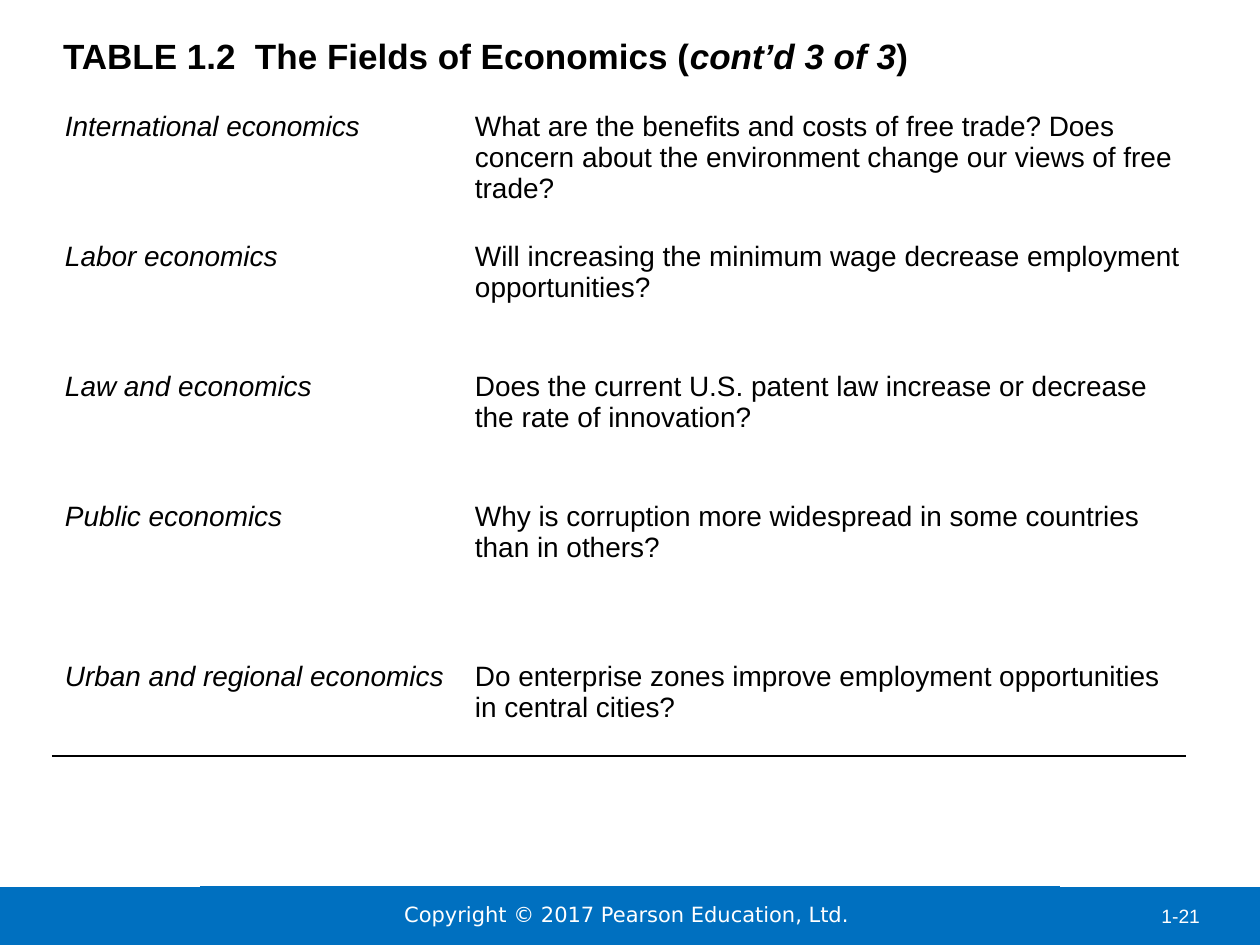
from dataclasses import dataclass

from lxml.etree import SubElement
from pptx import Presentation
from pptx.dml.color import RGBColor
from pptx.enum.shapes import MSO_SHAPE as Shape
from pptx.enum.text import MSO_ANCHOR as Anchor, MSO_AUTO_SIZE as AutoSize, PP_ALIGN as Align
from pptx.oxml.ns import qn
from pptx.util import Inches, Pt

PX = Inches(1) / 126
PLAIN_TABLE_STYLE = "{2D5ABB26-0587-4C30-8999-92F81FD0307C}"


def px(*lengths):
    return [round(length * PX) for length in lengths]


@dataclass(frozen=True)
class Theme:
    ink: str = "000000"
    light: str = "FFFFFF"
    band: str = "0070C0"
    font: str = "Arial"
    footer_font: str = "DejaVu Sans"
    title_size: int = 20
    body_size: int = 16
    footer_size: int = 12
    number_size: int = 11


class SlideBuilder:
    def __init__(self, slide, theme):
        self.slide = slide
        self.theme = theme

    def add_runs(self, frame, runs, size, color, font=None, bold=False, align=Align.LEFT):
        """Fill a text frame with (text, italic) runs."""
        paragraph = frame.paragraphs[0]
        paragraph.alignment = align
        for text, italic in runs:
            run = paragraph.add_run()
            run.text = text
            run.font.name = font or self.theme.font
            run.font.size = Pt(size)
            run.font.bold = bold
            run.font.italic = italic
            run.font.color.rgb = RGBColor.from_string(color)

    def set_margins(self, target, left=0, top=0, right=0, bottom=0):
        (target.margin_left, target.margin_top,
         target.margin_right, target.margin_bottom) = px(left, top, right, bottom)

    def title(self, box, runs):
        title = self.slide.shapes.title
        title.left, title.top, title.width, title.height = px(*box)
        frame = title.text_frame
        frame.word_wrap = True
        frame.auto_size = AutoSize.NONE
        frame.vertical_anchor = Anchor.TOP
        self.set_margins(frame, top=3)
        self.add_runs(frame, runs, self.theme.title_size, self.theme.ink, bold=True)

    def band(self, box, text=None):
        shape = self.slide.shapes.add_shape(Shape.RECTANGLE, *px(*box))
        shape.shadow.inherit = False
        shape.fill.solid()
        shape.fill.fore_color.rgb = RGBColor.from_string(self.theme.band)
        shape.line.fill.background()
        if text:
            frame = shape.text_frame
            frame.vertical_anchor = Anchor.MIDDLE
            self.set_margins(frame)
            self.add_runs(frame, [(text, False)], self.theme.footer_size, self.theme.light,
                          self.theme.footer_font, align=Align.CENTER)

    def page_number(self, box, text):
        frame = self.slide.shapes.add_textbox(*px(*box)).text_frame
        frame.word_wrap = True
        self.add_runs(frame, [(text, False)], self.theme.number_size, self.theme.light)

    def table(self, origin, widths, heights, rows):
        box = (*origin, sum(widths), sum(heights))
        table = self.slide.shapes.add_table(len(rows), len(widths), *px(*box)).table
        table.first_row = table.horz_banding = False
        table._tbl.tblPr.find(qn("a:tableStyleId")).text = PLAIN_TABLE_STYLE
        for column, width in zip(table.columns, px(*widths)):
            column.width = width
        for row, height, texts in zip(table.rows, px(*heights), rows):
            row.height = height
            for index, (cell, text) in enumerate(zip(row.cells, texts)):
                self.set_margins(cell, left=13, top=6, bottom=6)
                self.add_runs(cell.text_frame, [(text, index == 0)],
                              self.theme.body_size, self.theme.ink)
                if texts is rows[-1]:
                    self.bottom_border(cell)
                cell.fill.background()

    def bottom_border(self, cell):
        border = SubElement(cell._tc.get_or_add_tcPr(), qn("a:lnB"), w=str(Pt(1)))
        fill = SubElement(border, qn("a:solidFill"))
        SubElement(fill, qn("a:srgbClr"), val=self.theme.ink)


FIELDS = [
    ("International economics",
     "What are the benefits and costs of free trade? Does concern about the "
     "environment change our views of free trade?"),
    ("Labor economics",
     "Will increasing the minimum wage decrease employment opportunities?"),
    ("Law and economics",
     "Does the current U.S. patent law increase or decrease the rate of innovation?"),
    ("Public economics",
     "Why is corruption more widespread in some countries than in others?"),
    ("Urban and regional economics",
     "Do enterprise zones improve employment opportunities in central cities?"),
]


def main():
    presentation = Presentation()
    presentation.slide_width, presentation.slide_height = Inches(10), Inches(7.5)
    slide = presentation.slides.add_slide(presentation.slide_layouts[5])
    builder = SlideBuilder(slide, Theme())

    # Footer
    builder.band((-1, 887, 1262, 59))
    builder.band((200, 886, 860, 57), "Copyright © 2017 Pearson Education, Ltd. ")
    builder.page_number((1149, 898, 96, 37), "1-21")

    # Title
    builder.title((63, 32, 1134, 147), [
        ("TABLE 1.2  The Fields of Economics (", False),
        ("cont’d 3 of 3", True),
        (")", False),
    ])

    # Fields and their questions
    builder.table((52, 105), (410, 724), (130, 130, 130, 160, 101), FIELDS)

    presentation.save("out.pptx")


if __name__ == "__main__":
    main()
